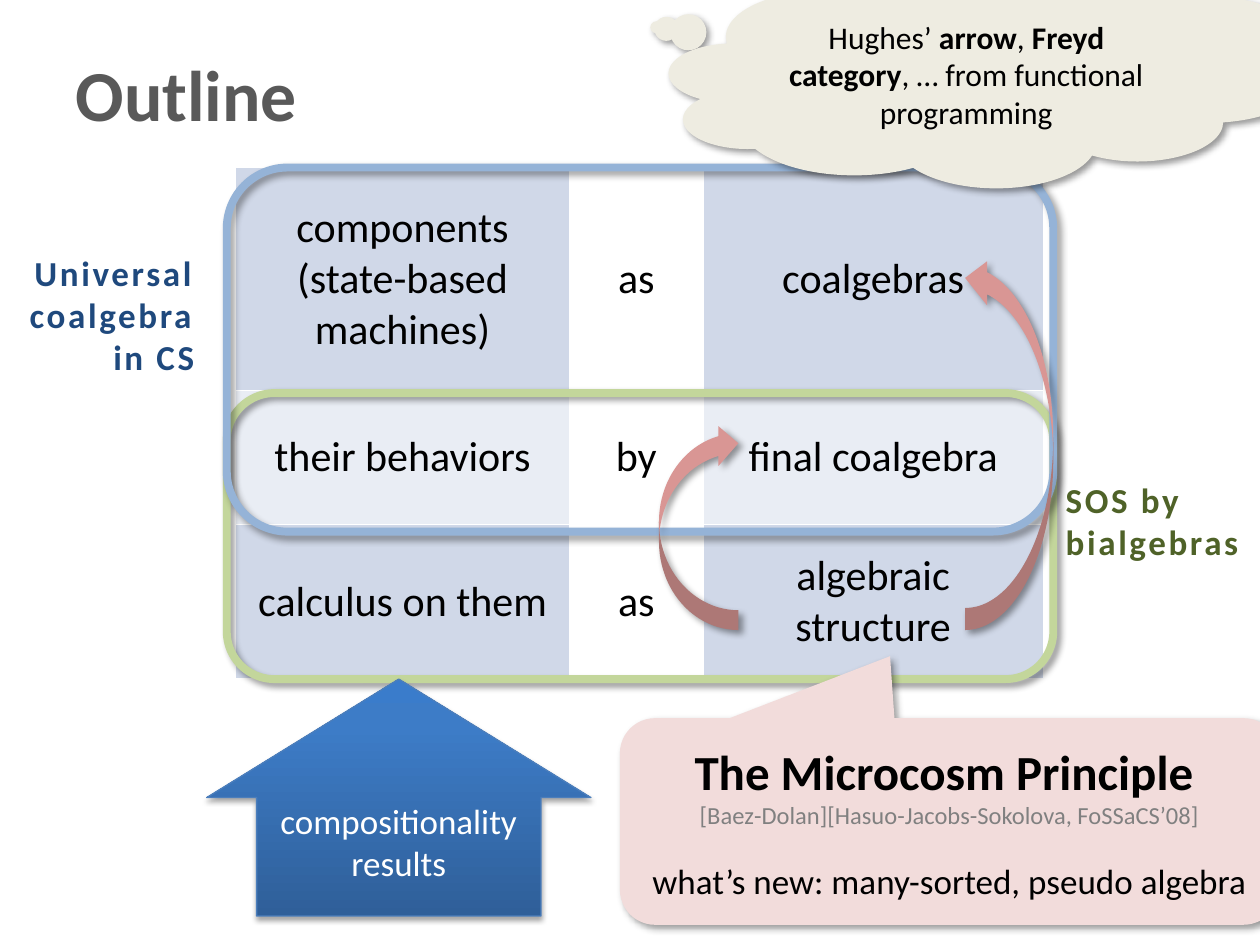
from lxml.etree import SubElement
from pptx import Presentation
from pptx.dml.color import RGBColor as RGB
from pptx.enum.shapes import MSO_SHAPE as SHAPE
from pptx.enum.text import MSO_ANCHOR as ANCHOR, MSO_AUTO_SIZE as AUTO, PP_ALIGN as ALIGN
from pptx.oxml import parse_xml
from pptx.oxml.ns import nsdecls, qn
from pptx.util import Inches, Pt

THEME = {
    "font": "Calibri",
    "title": {"size": 41, "bold": True, "color": "595959"},
    "cell": {"size": 24, "color": "000000"},
    "universal": {"size": 20, "bold": True, "color": "1F497D"},
    "sos": {"size": 20, "bold": True, "color": "4F6228"},
    "principle": {"size": 28, "bold": True, "color": "000000"},
    "citation": {"size": 14, "bold": False, "color": "808080"},
    "news": {"size": 20, "bold": False, "color": "000000"},
    "result": {"size": 20, "color": "FFFFFF"},
    "cloud": {"size": 18, "bold": False, "color": "000000"},
    "cloud_bold": {"size": 18, "bold": True, "color": "000000"},
    "bands": ["D0D8E8", "E9EDF4", "D0D8E8"],
    "white": "FFFFFF",
    "green": "C3D69B",
    "blue": "95B3D7",
    "arrow": "D99694",
    "pink": "F2DCDB",
    "cream": "EEECE1",
    "edge": "4B7EBC",
    "gradient": [(0, "2F5F99"), (80, "3D7CC7"), (100, "3A7CCB")],
    "soft": (40, 4, 3, 45),
    "below": (35, 3.1, 1.8, 90),
}

prs = Presentation()
prs.slide_width, prs.slide_height = Inches(10), Inches(7.5)
W, H = prs.slide_width, prs.slide_height
s = prs.slides.add_slide(prs.slide_layouts[5])


def share(x, y, w, h):
    return [int(v * side / 100) for v, side in zip((x, y, w, h), (W, H, W, H))]


def write(tf, paras, align=ALIGN.CENTER):
    tf.word_wrap = True
    for i, runs in enumerate(paras):
        p = tf.add_paragraph() if i else tf.paragraphs[0]
        p.alignment = align
        for text, style in runs:
            r = p.add_run()
            r.text = text
            fmt = {**THEME[style], "name": THEME["font"]}
            r.font.color.rgb = RGB.from_string(fmt.pop("color"))
            fmt["size"] = Pt(fmt["size"])
            for key, value in fmt.items():
                setattr(r.font, key, value)


title = s.shapes.title
title.left, title.top, title.width, title.height = share(5, 4, 90, 11.6)
write(title.text_frame, [[("Outline", "title")]], ALIGN.LEFT)
title.text_frame.vertical_anchor = ANCHOR.MIDDLE
title.text_frame.auto_size = AUTO.NONE

rows = [
    [["components", "(state-based machines)"], ["as"], ["coalgebras"]],
    [["their behaviors"], ["by"], ["final coalgebra"]],
    [["calculus on them"], ["as"], ["algebraic structure"]],
]
table = s.shapes.add_table(3, 3, *share(18.7, 17.73, 64.1, 54.1)).table
for col, width in zip(table.columns, (26.5, 10.6, 27)):
    col.width = int(W * width / 100)
for row, height in zip(table.rows, (23.6, 14.2, 16.3)):
    row.height = int(H * height / 100)
for i, row in enumerate(rows):
    for j, lines in enumerate(row):
        cell = table.cell(i, j)
        write(cell.text_frame, [[(line, "cell")] for line in lines])
        cell.vertical_anchor = ANCHOR.MIDDLE
        tcPr = cell._tc.get_or_add_tcPr()
        for side in "LRTB":
            ln = SubElement(tcPr, qn(f"a:ln{side}"), w=str(Pt(1)))
            SubElement(SubElement(ln, qn("a:solidFill")), qn("a:srgbClr"), val=THEME["white"])
        cell.fill.solid()
        cell.fill.fore_color.rgb = RGB.from_string(THEME["white"] if j == 1 else THEME["bands"][i])

frame_x, frame_w = 18, 65.6
items = [
    {"g": SHAPE.ROUNDED_RECTANGLE, "at": (frame_x, 41.6, frame_w, 30.27), "line": ("green", 4.5)},
    {"at": (83.6, 50, 16.4, 10.27), "align": ALIGN.LEFT,
     "text": [[("SOS by bialgebras", "sos")]]},
    {"g": SHAPE.ROUNDED_RECTANGLE, "at": (frame_x, 17.73, frame_w, 38.53), "line": ("blue", 4.5)},
    {"at": (0, 26, 16.4, 14.8), "align": ALIGN.RIGHT,
     "text": [[("Universal coalgebra in CS", "universal")]]},
    {"g": SHAPE.CURVED_LEFT_ARROW, "at": (52.3, 44.8, 6.3, 21.87), "fill": "arrow", "rot": 180},
    {"g": SHAPE.CURVED_LEFT_ARROW, "at": (76.6, 27.07, 7, 39.6), "fill": "arrow", "rot": 180,
     "flip": True},
    {"g": SHAPE.ROUNDED_RECTANGULAR_CALLOUT, "at": (49.2, 76, 52.3, 21.87), "fill": "pink",
     "adj": (-0.09, -0.8, 0.17), "gap": 17,
     "text": [[("The Microcosm Principle ", "principle")],
              [("[Baez-Dolan][Hasuo-Jacobs-Sokolova, FoSSaCS’08]", "citation")],
              [("what’s new: many-sorted, pseudo algebra", "news")]]},
    {"g": SHAPE.UP_ARROW, "at": (16.4, 71.87, 30.5, 25.07), "fill": "gradient",
     "line": ("edge", 0.75), "adj": (0.74, 0.5), "shadow": "below",
     "text": [[("compositionality", "result")], [("results", "result")]]},
    {"g": SHAPE.CLOUD_CALLOUT, "at": (53.1, -3.07, 50.8, 22.93), "fill": "cream",
     "adj": (-0.52, -0.24),
     "text": [[("Hughes’ ", "cloud"), ("arrow", "cloud_bold"), (", ", "cloud"),
               ("Freyd category", "cloud_bold"), (", … from functional programming", "cloud")]]},
]

for item in items:
    at = share(*item["at"])
    if "g" not in item:
        sp = s.shapes.add_textbox(*at)
        write(sp.text_frame, item["text"], item["align"])
        sp.text_frame.auto_size = AUTO.SHAPE_TO_FIT_TEXT
        for r in sp.text_frame.paragraphs[0].runs:
            r.font._element.set("spc", "150")
        continue

    sp = s.shapes.add_shape(item["g"], *at)
    sp.rotation = item.get("rot", 0)
    if item.get("flip"):
        sp._element.spPr.find(qn("a:xfrm")).set("flipH", "1")
    for i, value in enumerate(item.get("adj", ())):
        sp.adjustments[i] = value

    fill = item.get("fill")
    if fill == "gradient":
        sp.fill.gradient()
        sp.fill.gradient_angle = 90
        stops = sp._element.spPr.find(qn("a:gradFill")).find(qn("a:gsLst"))
        for stop in list(stops):
            stops.remove(stop)
        for pos, color in THEME["gradient"]:
            SubElement(SubElement(stops, qn("a:gs"), pos=str(pos * 1000)), qn("a:srgbClr"), val=color)
    elif fill:
        sp.fill.solid()
        sp.fill.fore_color.rgb = RGB.from_string(THEME[fill])
    else:
        sp.fill.background()

    if "line" in item:
        color, width = item["line"]
        sp.line.color.rgb = RGB.from_string(THEME[color])
        sp.line.width = Pt(width)
    else:
        sp.line.fill.background()

    sp.shadow.inherit = False
    alpha, blur, dist, angle = THEME[item.get("shadow", "soft")]
    sp._element.spPr.find(qn("a:effectLst")).append(parse_xml(
        f'<a:outerShdw {nsdecls("a")} blurRad="{Pt(blur)}" dist="{Pt(dist)}" dir="{angle * 60000}" '
        f'rotWithShape="0"><a:srgbClr val="000000"><a:alpha val="{alpha * 1000}"/></a:srgbClr>'
        f'</a:outerShdw>'))

    if "text" in item:
        write(sp.text_frame, item["text"])
        sp.text_frame.vertical_anchor = ANCHOR.MIDDLE
        sp.text_frame.paragraphs[-1].space_before = Pt(item.get("gap", 0))

prs.save("out.pptx")
